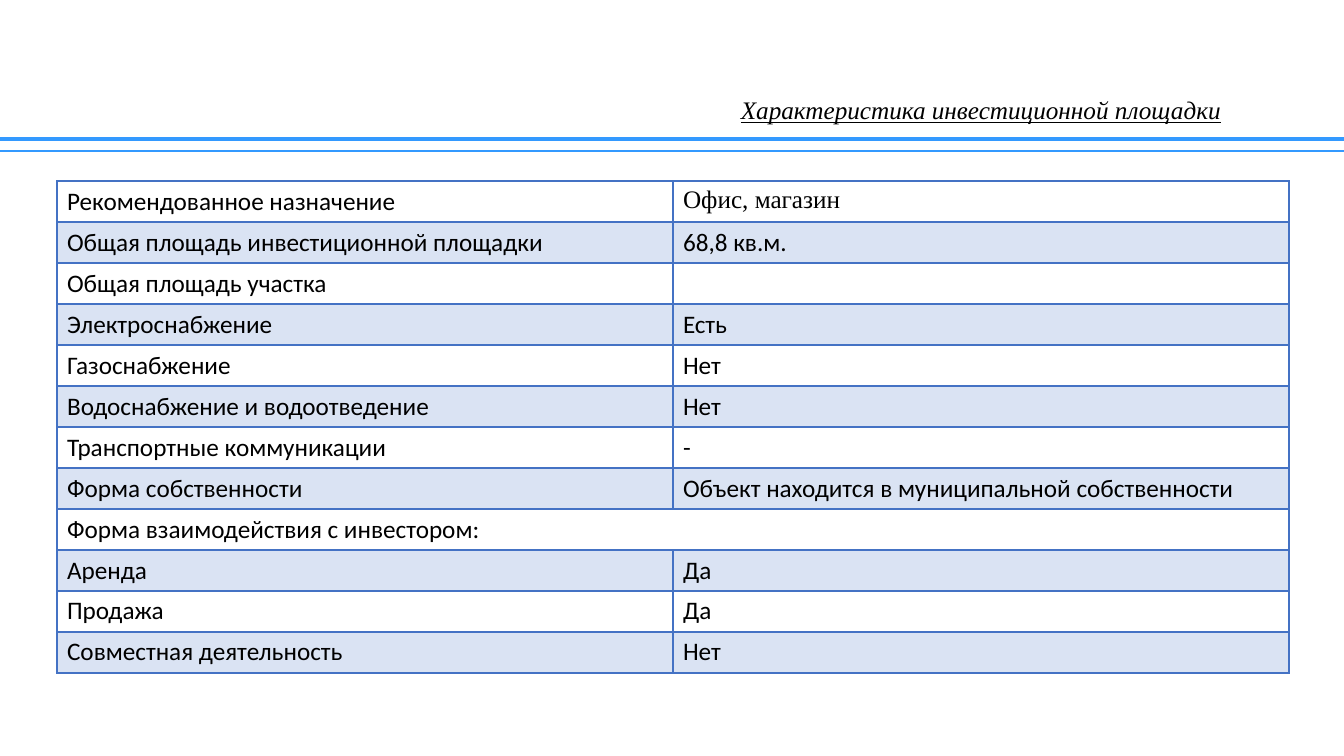
import pptx
import pptx.dml.color
import pptx.enum.shapes
import pptx.enum.text
import pptx.oxml.ns
import pptx.util
from lxml import etree

EMU_PER_PX = 914400 / 100.8
BLUE, RULE_BLUE, BAND, BLACK = "4472C4", "3399FF", "DAE3F3", "000000"
ROW_HEIGHT, COLUMN_WIDTH = 41, 616

ROWS = [
    ("Рекомендованное назначение", "Офис, магазин"),
    ("Общая площадь инвестиционной площадки", "68,8 кв.м."),
    ("Общая площадь участка", ""),
    ("Электроснабжение", "Есть"),
    ("Газоснабжение", "Нет"),
    ("Водоснабжение и водоотведение", "Нет"),
    ("Транспортные коммуникации", "-"),
    ("Форма собственности", "Объект находится в муниципальной собственности"),
    ("Форма взаимодействия с инвестором:",),
    ("Аренда", "Да"),
    ("Продажа", "Да"),
    ("Совместная деятельность", "Нет"),
]


def px(n):
    return pptx.util.Emu(round(n * EMU_PER_PX))


def rgb(color):
    return pptx.dml.color.RGBColor.from_string(color)


def set_font(p, name):
    p.font.name = name
    p.font.size = pptx.util.Pt(18)
    p.font.color.rgb = rgb(BLACK)


def add_rule(s, y, width):
    line = s.shapes.add_connector(
        pptx.enum.shapes.MSO_CONNECTOR.STRAIGHT, 0, px(y), px(1344), px(y))
    line.line.color.rgb = rgb(RULE_BLUE)
    line.line.width = pptx.util.Pt(width)
    etree.SubElement(line._element.spPr, pptx.oxml.ns.qn("a:effectLst"))


def add_title(s, text):
    sp = s.shapes.add_textbox(px(672), px(98), px(618), px(27))
    tf = sp.text_frame
    tf.word_wrap = True
    tf.margin_top = tf.margin_bottom = 0
    tf.vertical_anchor = pptx.enum.text.MSO_ANCHOR.MIDDLE
    p = tf.paragraphs[0]
    p.text = text
    p.alignment = pptx.enum.text.PP_ALIGN.CENTER
    p.line_spacing = 0.9
    set_font(p, "Times New Roman")
    p.font.italic = True
    p.font.underline = True


def set_borders(cell, bottom):
    qn = pptx.oxml.ns.qn
    tcPr = cell._tc.get_or_add_tcPr()
    for side, points in (("L", 1), ("R", 1), ("T", 1), ("B", bottom)):
        ln = etree.SubElement(tcPr, qn("a:ln" + side), w=str(pptx.util.Pt(points)))
        fill = etree.SubElement(ln, qn("a:solidFill"))
        etree.SubElement(fill, qn("a:srgbClr"), val=BLUE)


def style_cell(cell, text, font, banded, bottom):
    set_borders(cell, bottom)
    if banded:
        cell.fill.solid()
        cell.fill.fore_color.rgb = rgb(BAND)
    else:
        cell.fill.background()
    p = cell.text_frame.paragraphs[0]
    p.text = text
    set_font(p, font)


def add_site_table(s):
    table = s.shapes.add_table(
        len(ROWS), 2, px(57), px(181),
        px(2 * COLUMN_WIDTH), px(len(ROWS) * ROW_HEIGHT)).table
    table.first_row = table.horz_banding = False
    for column in table.columns:
        column.width = px(COLUMN_WIDTH)
    for i, texts in enumerate(ROWS):
        table.rows[i].height = px(ROW_HEIGHT)
        if len(texts) == 1:
            table.cell(i, 0).merge(table.cell(i, 1))
        for j in range(2):
            text = texts[j] if j < len(texts) else ""
            font = "Times New Roman" if (i, j) == (0, 1) else "Calibri"
            style_cell(table.cell(i, j), text, font, i % 2 == 1, 2 if i == 0 else 1)


def main():
    prs = pptx.Presentation()
    prs.slide_width, prs.slide_height = px(1344), px(756)
    s = prs.slides.add_slide(prs.slide_layouts[6])
    add_rule(s, 139, 3.5)
    add_rule(s, 151, 1.5)
    add_title(s, "Характеристика инвестиционной площадки")
    add_site_table(s)
    prs.save("out.pptx")


if __name__ == "__main__":
    main()
